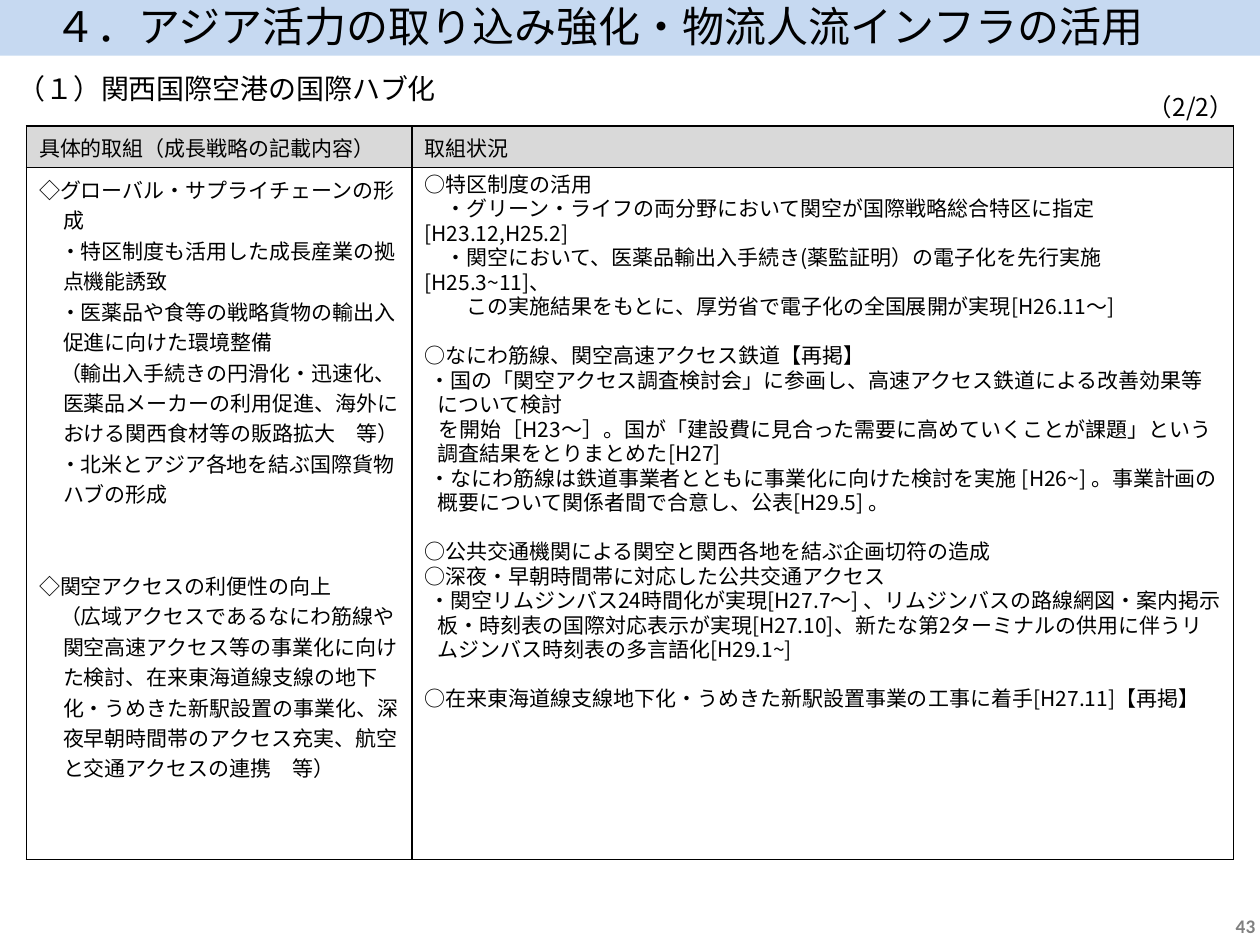
import dataclasses
from typing import Optional

import pptx
import pptx.dml.color
import pptx.enum.text
import pptx.oxml
import pptx.oxml.ns
import pptx.util
from lxml import etree

Pt = pptx.util.Pt
Align = pptx.enum.text.PP_ALIGN
Anchor = pptx.enum.text.MSO_ANCHOR

JAPANESE = "Noto Sans CJK JP"
BLACK, GREY, HEADER, BAND = "000000", "808080", "D9D9D9", "C6D9F1"


@dataclasses.dataclass
class Item:
    """One paragraph; left and first are its indents, before its gap, in points."""
    text: str
    left: float = 0
    first: float = 0
    before: float = 0
    line: Optional[float] = None


def color(value: str):
    return pptx.dml.color.RGBColor.from_string(value)


def write(paragraph, text: str, *, size: float = 12, font: str = JAPANESE,
          fill: str = BLACK, bold: bool = False, align=Align.LEFT) -> None:
    paragraph.alignment = align
    run = paragraph.add_run()
    run.text = text
    run.font.size = Pt(size)
    run.font.name = font
    run.font.bold = bold
    run.font.color.rgb = color(fill)
    east_asian = etree.SubElement(run.font._element, pptx.oxml.ns.qn("a:ea"))
    east_asian.set("typeface", font)


def add_text(slide, text: str, left: float, top: float, width: float,
             height: float, *, anchor=Anchor.TOP, **text_format) -> None:
    box = slide.shapes.add_textbox(Pt(left), Pt(top), Pt(width), Pt(height))
    box.text_frame.word_wrap = True
    box.text_frame.vertical_anchor = anchor
    write(box.text_frame.paragraphs[0], text, **text_format)


def add_borders(cell, width: float = 1) -> None:
    properties = cell._tc.get_or_add_tcPr()
    for index, side in enumerate(("lnL", "lnR", "lnT", "lnB")):
        properties.insert(index, pptx.oxml.parse_xml(
            f'<a:{side} {pptx.oxml.ns.nsdecls("a")} w="{Pt(width)}"><a:solidFill>'
            f'<a:srgbClr val="{BLACK}"/></a:solidFill></a:{side}>'))


def fill_cell(cell, items: list[Item], background: Optional[str] = None) -> None:
    if background:
        cell.fill.solid()
        cell.fill.fore_color.rgb = color(background)
    else:
        cell.fill.background()
    add_borders(cell)
    for index, item in enumerate(items):
        frame = cell.text_frame
        paragraph = frame.add_paragraph() if index else frame.paragraphs[0]
        write(paragraph, item.text)
        properties = paragraph._p.get_or_add_pPr()
        properties.set("marL", str(Pt(item.left)))
        properties.set("indent", str(Pt(item.first)))
        paragraph.space_before = Pt(item.before)
        if item.line:
            paragraph.line_spacing = Pt(item.line)


def measure(text: str, before: float = 0) -> Item:
    """Strategy column: headings hang, details stand below them."""
    return Item(text, 13.7, -13.7 if text.startswith("◇") else -1.7, before)


def status(text: str, left: float = 0, first: float = 0, before: float = 0) -> Item:
    return Item(text, left, first, before, LINE)


LINE = 14
MEASURES = [
    measure("◇グローバル・サプライチェーンの形成"),
    measure("・特区制度も活用した成長産業の拠点機能誘致"),
    measure("・医薬品や食等の戦略貨物の輸出入促進に向けた環境整備"),
    measure("（輸出入手続きの円滑化・迅速化、医薬品メーカーの利用促進、海外における"
            "関西食材等の販路拡大　等）"),
    measure("・北米とアジア各地を結ぶ国際貨物ハブの形成"),
    measure("◇関空アクセスの利便性の向上", before=34.8),
    measure("（広域アクセスであるなにわ筋線や関空高速アクセス等の事業化に向けた検討、"
            "在来東海道線支線の地下化・うめきた新駅設置の事業化、深夜早朝時間帯の"
            "アクセス充実、航空と交通アクセスの連携　等）"),
]
STATUSES = [
    status("○特区制度の活用"),
    status("・グリーン・ライフの両分野において関空が国際戦略総合特区に指定"
           "[H23.12,H25.2]", first=12),
    status("・関空において、医薬品輸出入手続き(薬監証明）の電子化を先行実施"
           "[H25.3~11]、", first=12),
    status("この実施結果をもとに、厚労省で電子化の全国展開が実現[H26.11～]", first=24),
    status("○なにわ筋線、関空高速アクセス鉄道【再掲】", before=LINE),
    status("・国の「関空アクセス調査検討会」に参画し、高速アクセス鉄道による"
           "改善効果等について検討", 7.2, -4.5),
    status("を開始［H23～］。国が「建設費に見合った需要に高めていくことが課題」"
           "という調査結果をとりまとめた[H27]", 7.2, 0.9),
    status("・なにわ筋線は鉄道事業者とともに事業化に向けた検討を実施 [H26~] 。"
           "事業計画の概要について関係者間で合意し、公表[H29.5] 。", 7.2, -4.5),
    status("○公共交通機関による関空と関西各地を結ぶ企画切符の造成", 7.2, -7.2, LINE),
    status("○深夜・早朝時間帯に対応した公共交通アクセス", 7.2, -7.2),
    status("・関空リムジンバス24時間化が実現[H27.7～] 、リムジンバスの路線網図・"
           "案内掲示板・時刻表の国際対応表示が実現[H27.10]、新たな第2ターミナルの"
           "供用に伴うリムジンバス時刻表の多言語化[H29.1~]", 7.2, -4.5),
    status("○在来東海道線支線地下化・うめきた新駅設置事業の工事に着手"
           "[H27.11]【再掲】", 7.2, -7.2, LINE),
]


def add_title(slide, text: str) -> None:
    title = slide.shapes.title
    title.left, title.top, title.width, title.height = Pt(0), Pt(-2), Pt(720), Pt(33.8)
    title.fill.solid()
    title.fill.fore_color.rgb = color(BAND)
    frame = title.text_frame
    frame.auto_size = pptx.enum.text.MSO_AUTO_SIZE.NONE
    frame.word_wrap = True
    frame.vertical_anchor = Anchor.MIDDLE
    frame.margin_left = Pt(31.2)
    write(frame.paragraphs[0], text, size=24)


def add_progress_table(slide) -> None:
    widths, heights = (220.3, 469.5), (23.8, 395.3)
    table = slide.shapes.add_table(2, 2, Pt(15.1), Pt(72), Pt(sum(widths)),
                                   Pt(sum(heights))).table
    table.first_row = table.horz_banding = False
    for column, width in zip(table.columns, widths):
        column.width = Pt(width)
    for row, height in zip(table.rows, heights):
        row.height = Pt(height)
    headings = ("具体的取組（成長戦略の記載内容）", "取組状況")
    for index, (heading, items) in enumerate(zip(headings, (MEASURES, STATUSES))):
        fill_cell(table.cell(0, index), [Item(heading)], HEADER)
        fill_cell(table.cell(1, index), items)


def main() -> None:
    presentation = pptx.Presentation()
    presentation.slide_width, presentation.slide_height = Pt(720), Pt(540)
    slide = presentation.slides.add_slide(presentation.slide_layouts[5])

    # Heading band and section name
    add_title(slide, "４．アジア活力の取り込み強化・物流人流インフラの活用")
    add_text(slide, "（１）関西国際空港の国際ハブ化", 2.9, 37.4, 556, 26.6, size=16)

    # Measures and their progress
    add_progress_table(slide)

    # Part count and page number
    add_text(slide, "（2/2）", 638, 49, 85, 24.5, size=14,
             anchor=Anchor.MIDDLE, align=Align.CENTER)
    add_text(slide, "43", 556.6, 510.5, 167.8, 28.8, size=11, font="Calibri",
             fill=GREY, bold=True, anchor=Anchor.BOTTOM, align=Align.RIGHT)

    presentation.save("out.pptx")


if __name__ == "__main__":
    main()
